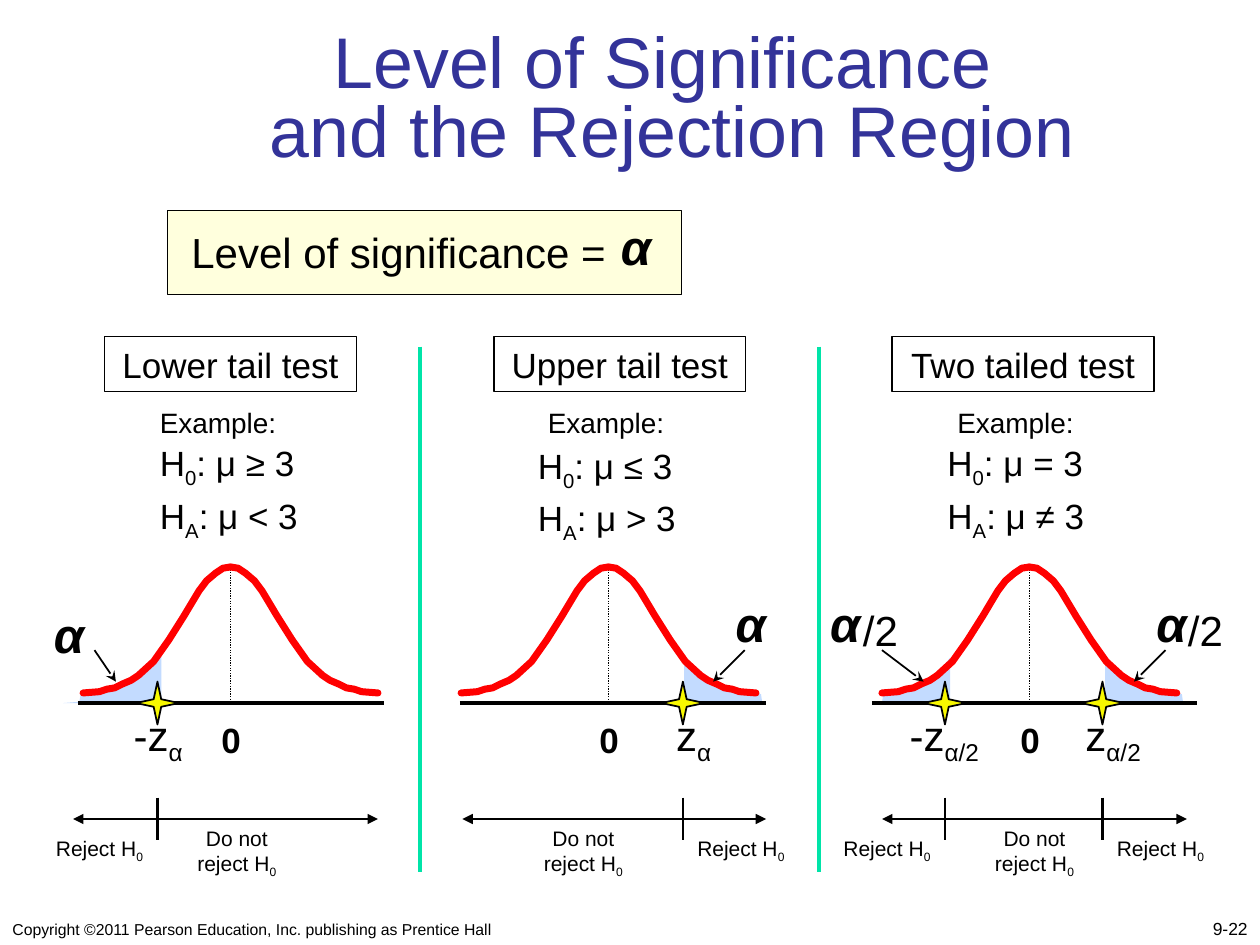
"""Build the slide on the level of significance and the rejection region."""
from lxml import etree
from pptx import Presentation
from pptx import util as u
from pptx.dml.color import RGBColor
from pptx.enum import dml, shapes, text
from pptx.oxml import ns

BLACK = RGBColor(0x00, 0x00, 0x00)
NAVY = RGBColor(0x33, 0x33, 0x99)
CREAM = RGBColor(0xFF, 0xFF, 0xDD)
PALE_BLUE = RGBColor(0xC3, 0xDB, 0xFF)
RED = RGBColor(0xFF, 0x00, 0x00)
YELLOW = RGBColor(0xF8, 0xF8, 0x00)
GREEN = RGBColor(0x00, 0xE4, 0xA8)
FONT = "Arial"

TITLE = "Level of Significance \vand the Rejection Region"
DIVIDERS = (3.33, 6.5)
AXIS_Y, PEAK_Y, REGION_Y = 5.58, 4.5, 6.5

HALF_CURVE = ((1.17, 5.5), (1.04, 5.49), (0.98, 5.47), (0.92, 5.46), (0.86, 5.43),
              (0.79, 5.4), (0.73, 5.36), (0.61, 5.25), (0.49, 5.08), (0.37, 4.89),
              (0.31, 4.79), (0.25, 4.69), (0.19, 4.61), (0.12, 4.55), (0.06, 4.51),
              (0, 4.5))
LOWER_TAIL = ((1.2, 5.57), (1.19, 5.51), (0.9, 5.44), (0.73, 5.38), (0.63, 5.27),
              (0.55, 5.16), (0.55, 5.58), (1.33, 5.58))
UPPER_TAIL = ((1.21, 5.51), (1.05, 5.47), (0.9, 5.44), (0.78, 5.39), (0.68, 5.31),
              (0.6, 5.22), (0.6, 5.57), (1.22, 5.58))
LEFT_HALF_TAIL = ((1.16, 5.51), (1.02, 5.47), (0.89, 5.44), (0.79, 5.39), (0.7, 5.31),
                  (0.63, 5.22), (0.63, 5.57), (1.17, 5.58))

PANELS = (
    dict(name="Lower tail test", heading=(0.83, 2), example=1.17, hypotheses=(1.17, 3.42),
         null=": μ ≥ 3", alternative=": μ < 3", centre=1.83, axis=(0.62, 3.05),
         regions=(0.58, 3), keep=1.42, cutoffs=(
             dict(side=-1, x=1.25, tail=LOWER_TAIL, sign="-z", sub="α", label=(0.92, 0.67),
                  alpha=(0.33, 4.75), half=None, pointer=(0.75, 0.92)),)),
    dict(name="Upper tail test", heading=(3.92, 2), example=4.25, hypotheses=(4.17, 3.44),
         null=": μ ≤ 3", alternative=": μ > 3", centre=4.83, axis=(3.65, 6.08),
         regions=(3.67, 6.08), keep=4.17, cutoffs=(
             dict(side=1, x=5.42, tail=UPPER_TAIL, sign="z", sub="α", label=(5.17, 0.67),
                  alpha=(5.74, 4.66), half=None, pointer=(5.91, 5.66)),)),
    dict(name="Two tailed test", heading=(7.08, 2.08), example=7.5, hypotheses=(7.42, 3.42),
         null=": μ = 3", alternative=": μ ≠ 3", centre=8.17, axis=(6.92, 9.5),
         regions=(7, 9.42), keep=7.75, cutoffs=(
             dict(side=-1, x=7.5, tail=LEFT_HALF_TAIL, sign="-z", sub="α/2",
                  label=(7.08, 0.83), alpha=(6.49, 4.66), half=6.75, pointer=(7, 7.33)),
             dict(side=1, x=8.75, tail=UPPER_TAIL, sign="z", sub="α/2",
                  label=(8.42, 0.83), alpha=(9.08, 4.66), half=9.33, pointer=(9.25, 9)))),
)


def style(shape, fill=None, line=None, width=1):
    shape.shadow.inherit = False
    if fill is None:
        shape.fill.background()
    else:
        shape.fill.solid()
        shape.fill.fore_color.rgb = fill
    if line is None:
        shape.line.fill.background()
    else:
        shape.line.color.rgb = line
        shape.line.width = u.Pt(width)
    return shape


def write(frame, lines, size, align=None, spacing=None, bold=None, italic=None):
    frame.word_wrap = True
    for index, pieces in enumerate(lines):
        paragraph = frame.paragraphs[0] if index == 0 else frame.add_paragraph()
        for position, piece in enumerate(pieces):
            run = paragraph.add_run()
            run.text = piece
            if position == 1:
                run._r.get_or_add_rPr().set("baseline", "-25000")
        paragraph.alignment = align
        paragraph.line_spacing = spacing
        font = paragraph.font
        font.name, font.size, font.bold, font.italic = FONT, u.Pt(size), bold, italic
        font.color.rgb = BLACK


def label(slide, box, lines, size, anchor=text.MSO_ANCHOR.TOP, **look):
    frame = slide.shapes.add_textbox(*map(u.Inches, box)).text_frame
    frame.vertical_anchor = anchor
    write(frame, lines, size, **look)


def rectangle(slide, box, fill=None):
    shape = slide.shapes.add_shape(shapes.MSO_SHAPE.RECTANGLE, *map(u.Inches, box))
    return style(shape, fill, BLACK, 0.75)


def line(slide, start, end, width, color=BLACK, dash=None, head=None, tail=None):
    connector = slide.shapes.add_connector(
        shapes.MSO_CONNECTOR.STRAIGHT, *map(u.Inches, (*start, *end)))
    connector.line.color.rgb = color
    connector.line.width = u.Pt(width)
    if dash:
        connector.line.dash_style = dash
    outline = connector.line._get_or_add_ln()
    for tag, kind in (("a:headEnd", head), ("a:tailEnd", tail)):
        if kind:
            etree.SubElement(outline, ns.qn(tag), type=kind)
    etree.SubElement(connector._element.spPr, ns.qn("a:effectLst"))


def outline_shape(slide, offsets, centre, side, close):
    points = [(u.Inches(centre + side * dx), u.Inches(y)) for dx, y in offsets]
    builder = slide.shapes.build_freeform(*points[0])
    builder.add_line_segments(points[1:], close=close)
    return builder.convert_to_shape()


def draw_panel(slide, panel):
    centre, cutoffs = panel["centre"], panel["cutoffs"]
    middle = text.PP_ALIGN.CENTER
    left, width = panel["heading"]
    heading = rectangle(slide, (left, 2.67, width, 0.44))
    write(heading.text_frame, [[panel["name"]]], 20, align=middle)
    label(slide, (panel["example"], 3.17, 1.17, 0.36), [["Example:"]], 16)
    label(slide, (*panel["hypotheses"], 1.59, 0.83),
          [["H", "0", panel["null"]], ["H", "A", panel["alternative"]]], 20, spacing=1.1)

    line(slide, (centre, PEAK_Y), (centre, AXIS_Y), 0.75, dash=dml.MSO_LINE.ROUND_DOT)
    for cutoff in cutoffs:
        style(outline_shape(slide, cutoff["tail"], centre, cutoff["side"], True), PALE_BLUE)
    for side in (-1, 1):
        curve = style(outline_shape(slide, HALF_CURVE, centre, side, False), None, RED, 4)
        curve.line._get_or_add_ln().set("cap", "rnd")
    start, end = panel["axis"]
    line(slide, (start, AXIS_Y), (end, AXIS_Y), 2)
    label(slide, (centre - 0.17, 5.65, 0.33, 0.43), [["0"]], 20, bold=True)

    start, end = panel["regions"]
    line(slide, (start, REGION_Y), (end, REGION_Y), 1.5, head="triangle", tail="triangle")
    label(slide, (panel["keep"], REGION_Y, 0.92, 0.5), [["Do not reject H", "0"]], 12, align=middle)
    for cutoff in cutoffs:
        x = cutoff["x"]
        star = slide.shapes.add_shape(shapes.MSO_SHAPE.STAR_4_POINT, *map(
            u.Inches, (x - 0.17, AXIS_Y - 0.17, 0.34, 0.34)))
        star.adjustments[0] = 0.125
        style(star, YELLOW, BLACK, 1)
        left, width = cutoff["label"]
        label(slide, (left, AXIS_Y, width, 0.5), [[cutoff["sign"], cutoff["sub"]]], 24, align=middle)
        label(slide, (*cutoff["alpha"], 0.58, 0.56), [["α"]], 28, bold=True, italic=True)
        if cutoff["half"]:
            label(slide, (cutoff["half"], 4.75, 0.59, 0.5), [["/2"]], 24)
        start, end = cutoff["pointer"]
        line(slide, (start, 5.16), (end, 5.41), 1, tail="stealth")
        line(slide, (x, REGION_Y - 0.17), (x, REGION_Y + 0.17), 1.5)
        reject_left = x - 0.92 if cutoff["side"] < 0 else x
        label(slide, (reject_left, 6.58, 0.92, 0.3), [["Reject H", "0"]], 12, align=middle)


def main():
    deck = Presentation()
    deck.slide_width, deck.slide_height = u.Inches(10), u.Inches(7.5)
    slide = deck.slides.add_slide(deck.slide_layouts[5])

    title = slide.shapes.title
    title.left, title.top, title.width, title.height = map(u.Inches, (1.08, 0.33, 8.52, 1.08))
    title.text_frame.text = TITLE
    title.text_frame.auto_size = text.MSO_AUTO_SIZE.NONE
    title.text_frame.vertical_anchor = text.MSO_ANCHOR.BOTTOM
    paragraph = title.text_frame.paragraphs[0]
    paragraph.alignment, paragraph.line_spacing = text.PP_ALIGN.CENTER, 0.8
    paragraph.font.name, paragraph.font.size = FONT, u.Pt(41)
    paragraph.font.color.rgb = NAVY

    rectangle(slide, (1.33, 1.67, 4.08, 0.67), CREAM)
    label(slide, (1.42, 1.75, 3.59, 0.5), [["Level of significance ="]], 24)
    label(slide, (4.83, 1.67, 0.58, 0.56), [["α"]], 28, bold=True, italic=True)
    for x in DIVIDERS:
        line(slide, (x, 2.75), (x, 6.92), 2.25, GREEN)
    for panel in PANELS:
        draw_panel(slide, panel)

    bottom = text.MSO_ANCHOR.BOTTOM
    label(slide, (0, 7.17, 5.08, 0.33),
          [["Copyright ©2011 Pearson Education, Inc. publishing as Prentice Hall"]], 9, bottom)
    label(slide, (7.92, 7.16, 2.08, 0.34), [["9-22"]], 10, bottom, align=text.PP_ALIGN.RIGHT)
    deck.save("out.pptx")


if __name__ == "__main__":
    main()
